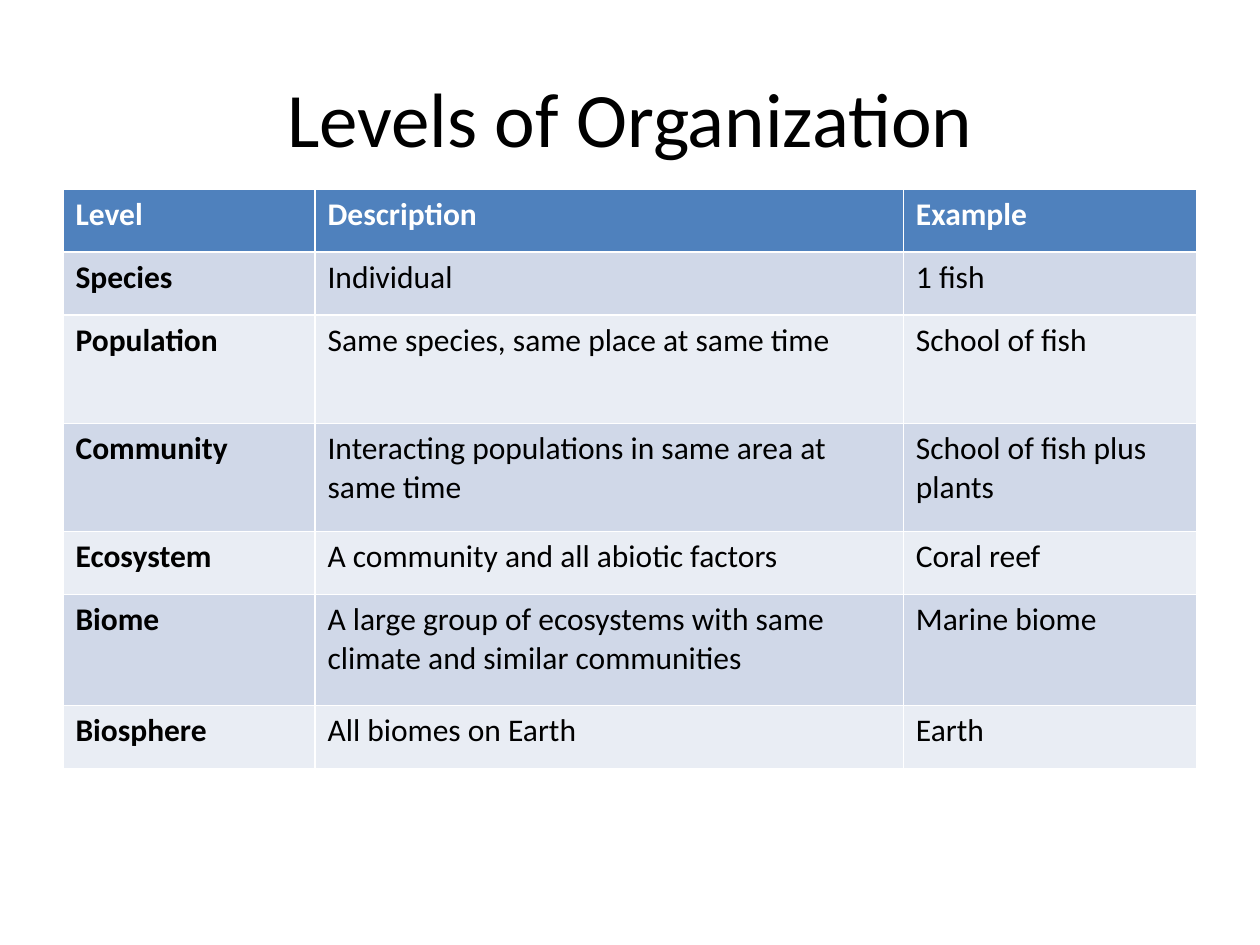
import pptx
import pptx.util
import pptx.dml.color
import pptx.enum.text

Inches = pptx.util.Inches
RGBColor = pptx.dml.color.RGBColor

BLACK = RGBColor(0x00, 0x00, 0x00)
WHITE = RGBColor(0xFF, 0xFF, 0xFF)
BLUE = RGBColor(0x4F, 0x81, 0xBD)
BANDS = (RGBColor(0xE9, 0xED, 0xF4), RGBColor(0xD0, 0xD8, 0xE8))

WIDTHS = (2, 4.67, 2.33)
LEVELS = (
    (0.5, "Level", "Description", "Example"),
    (0.5, "Species", "Individual", "1 fish"),
    (0.86, "Population", "Same species, same place at same time", "School of fish"),
    (0.86, "Community", "Interacting populations in same area at same time",
     "School of fish plus plants"),
    (0.5, "Ecosystem", "A community and all abiotic factors", "Coral reef"),
    (0.88, "Biome",
     "A large group of ecosystems with same climate and similar communities",
     "Marine biome"),
    (0.5, "Biosphere", "All biomes on Earth", "Earth"),
)


class Page:
    font = "Calibri"

    def __init__(self, deck):
        self.slide = deck.slides.add_slide(deck.slide_layouts[5])

    def add_text(self, frame, text, size, color, bold=False):
        para = frame.paragraphs[0]
        run = para.add_run()
        run.text = text
        run.font.name = self.font
        run.font.size = pptx.util.Pt(size)
        run.font.bold = bold
        run.font.color.rgb = color
        return para

    def title(self, text, left, top, width, height):
        shape = self.slide.shapes.title
        shape.left, shape.top = Inches(left), Inches(top)
        shape.width, shape.height = Inches(width), Inches(height)
        shape.text_frame.vertical_anchor = pptx.enum.text.MSO_ANCHOR.MIDDLE
        para = self.add_text(shape.text_frame, text, 44, BLACK)
        para.alignment = pptx.enum.text.PP_ALIGN.CENTER

    def table(self, rows, widths, left, top):
        height = sum(row[0] for row in rows)
        table = self.slide.shapes.add_table(
            len(rows), len(widths), Inches(left), Inches(top),
            Inches(sum(widths)), Inches(height)).table
        for col, width in zip(table.columns, widths):
            col.width = Inches(width)
        for i, (tall, *texts) in enumerate(rows):
            table.rows[i].height = Inches(tall)
            head = i == 0
            for j, text in enumerate(texts):
                cell = table.cell(i, j)
                cell.fill.solid()
                cell.fill.fore_color.rgb = BLUE if head else BANDS[i % 2]
                self.add_text(cell.text_frame, text, 18,
                              WHITE if head else BLACK, head or j == 0)


def main():
    deck = pptx.Presentation()
    deck.slide_width, deck.slide_height = Inches(10), Inches(7.5)
    page = Page(deck)
    page.title("Levels of Organization", 0.5, 0.3, 9, 1.25)
    page.table(LEVELS, WIDTHS, 0.5, 1.5)
    deck.save("out.pptx")


if __name__ == "__main__":
    main()
